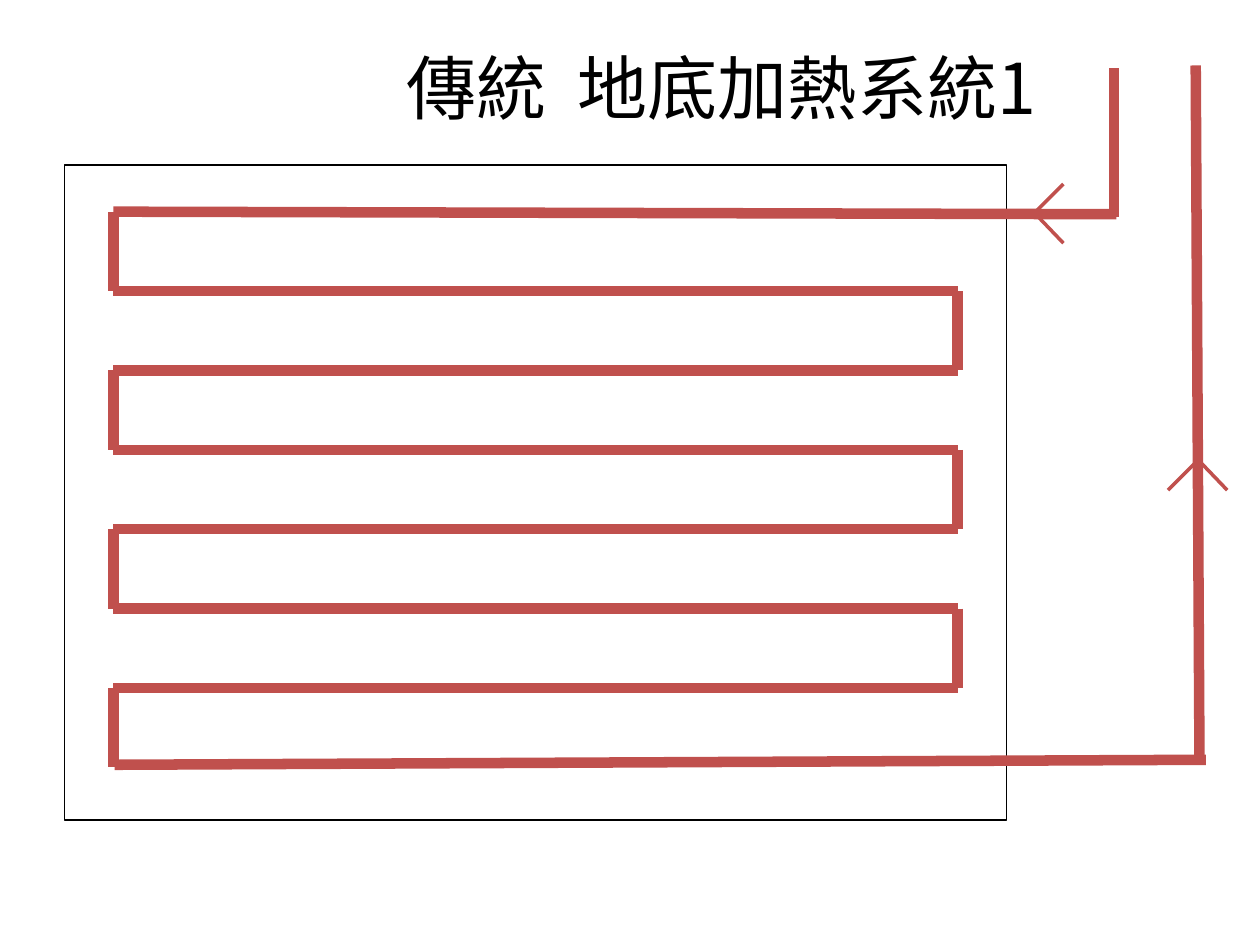
from pptx import Presentation
from pptx.dml.color import RGBColor
from pptx.enum.shapes import MSO_CONNECTOR, MSO_SHAPE
from pptx.enum.text import MSO_ANCHOR, PP_ALIGN
from pptx.oxml.ns import qn
from pptx.util import Inches, Pt
from lxml.etree import SubElement

COLORS = {"pipe": "C0504D", "ink": "000000"}
FONT = "Noto Sans CJK SC"
COLS, ROWS = 100, 75
CELL = Inches(10) / COLS


def grid(*cells):
    """Turn grid columns or rows into lengths."""
    return [round(cell * CELL) for cell in cells]


def color(name):
    """Look up a colour by its role."""
    return RGBColor.from_string(COLORS[name])


def draw(shapes, start, end, width=6):
    """Draw one straight stretch of pipe or arrow."""
    line = shapes.add_connector(MSO_CONNECTOR.STRAIGHT, *grid(*start, *end))
    line.line.color.rgb = color("pipe")
    line.line.width = Pt(width)
    SubElement(line._element.spPr, qn("a:effectLst"))


def arrow(shapes, tip, wings):
    """Draw an open arrowhead from its wings to its tip."""
    for dx, dy in wings:
        draw(shapes, (tip[0] + dx, tip[1] + dy), tip, 2)


def title(slide, box, text):
    """Place the centred heading in its box."""
    frame = slide.shapes.add_textbox(*grid(*box)).text_frame
    frame.word_wrap = True
    frame.vertical_anchor = MSO_ANCHOR.MIDDLE
    para = frame.paragraphs[0]
    para.text = text
    para.alignment = PP_ALIGN.CENTER
    font = para.font
    font.name, font.size = FONT, Pt(40)
    font.color.rgb = color("ink")
    SubElement(font._element, qn("a:ea"), typeface=FONT)


def room(slide, box):
    """Outline the heated floor."""
    floor = slide.shapes.add_shape(MSO_SHAPE.RECTANGLE, *grid(*box))
    floor.shadow.inherit = False
    floor.fill.background()
    floor.line.color.rgb = color("ink")
    floor.line.width = Pt(0.75)


def coil(shapes, box, turns=7):
    """Wind the pipe back and forth across the box."""
    left, top, width, height = box
    right, step = left + width, height / turns
    for turn in range(turns):
        y = top + turn * step
        side = right if turn % 2 else left
        if turn:
            draw(shapes, (right, y), (left, y))
        draw(shapes, (side, y), (side, y + step))


def feed(shapes, box):
    """Bring the supply pipe down and into the coil."""
    left, top, width, height = box
    right, base = left + width, top + height
    draw(shapes, (right + 0.2, base - 0.2), (left, base - 0.4))
    draw(shapes, (right, top), (right, base))
    arrow(shapes, (right - 6.3, base - 0.3), [(2.3, -2.3), (2.3, 2.4)])


def drain(shapes, box):
    """Lead the return pipe out of the coil and up."""
    left, top, width, height = box
    right, base = left + width, top + height
    draw(shapes, (right + 0.5, base), (left, base + 0.4))
    draw(shapes, (right - 0.3, top), (right, base))
    arrow(shapes, (right - 0.1, top + 31.3), [(2.3, 2.4), (-2.4, 2.4)])


def main():
    """Build the floor heating slide."""
    deck = Presentation()
    deck.slide_width, deck.slide_height = grid(COLS, ROWS)
    slide = deck.slides.add_slide(deck.slide_layouts[6])
    room(slide, (5.1, 13.1, 74.8, 52))
    pipes = slide.shapes.add_group_shape().shapes
    coil(pipes, (9, 16.8, 67, 44.1))
    feed(pipes, (9, 5.4, 79.4, 11.8))
    drain(pipes, (9.1, 5.2, 86.1, 55.1))
    title(slide, (19.5, 3, 75.5, 7.7), "傳統  地底加熱系統1")
    deck.save("out.pptx")


if __name__ == "__main__":
    main()
